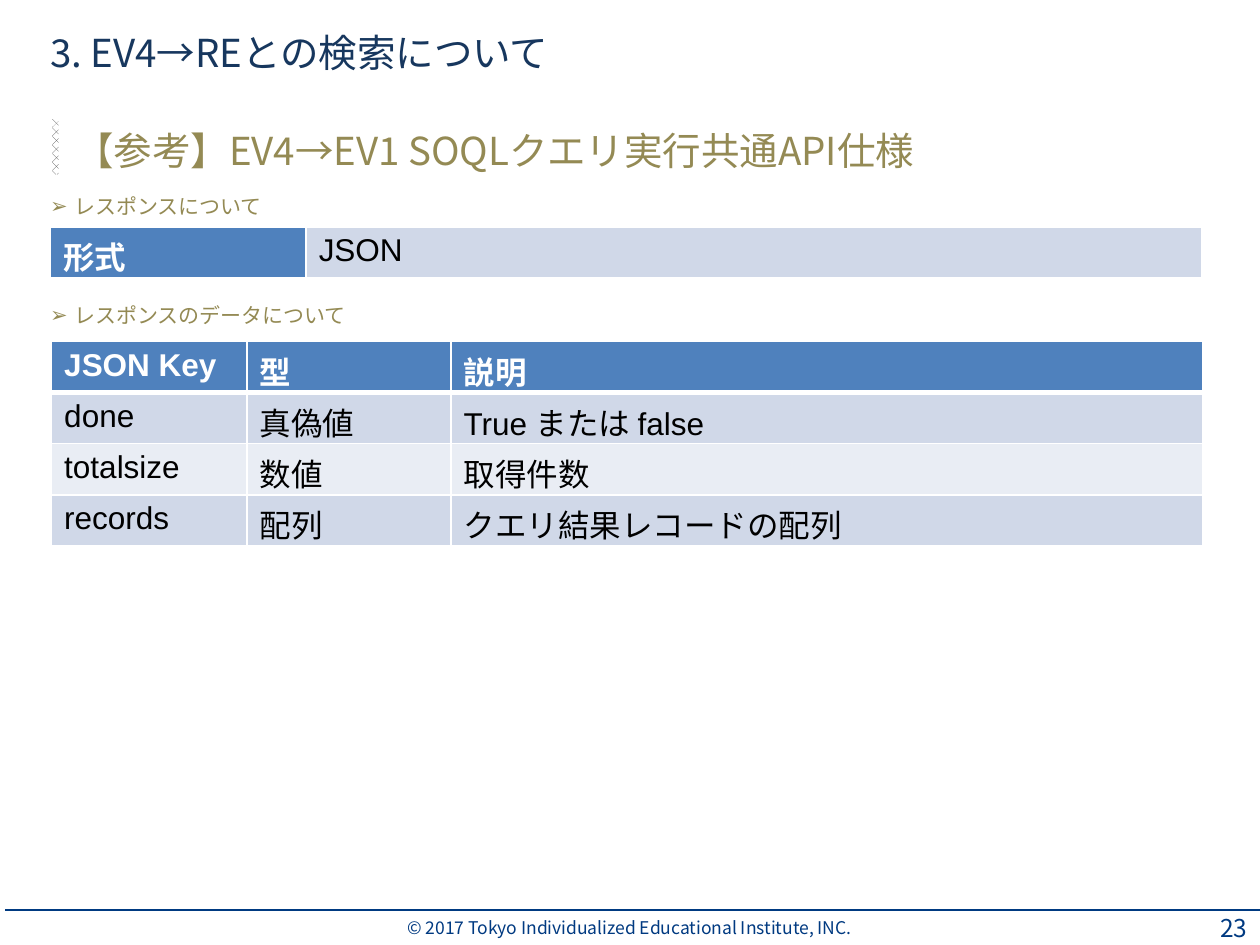
from lxml import etree
from pptx import Presentation
from pptx.dml.color import RGBColor
from pptx.enum.dml import MSO_PATTERN
from pptx.enum.shapes import MSO_CONNECTOR, MSO_SHAPE
from pptx.enum.text import MSO_ANCHOR, PP_ALIGN
from pptx.oxml.ns import qn
from pptx.util import Inches, Pt

LEFT, CENTER, RIGHT = PP_ALIGN.LEFT, PP_ALIGN.CENTER, PP_ALIGN.RIGHT
MIDDLE = MSO_ANCHOR.MIDDLE
RECT = MSO_SHAPE.RECTANGLE
STRAIGHT = MSO_CONNECTOR.STRAIGHT
PCT50 = MSO_PATTERN.PERCENT_50

NAVY = RGBColor(0x17, 0x37, 0x5E)
FOOTER = RGBColor(0x00, 0x3A, 0x81)
OLIVE = RGBColor(0x94, 0x8A, 0x54)
GRAY = RGBColor(0x4D, 0x4D, 0x4D)
WHITE = RGBColor(0xFF, 0xFF, 0xFF)
BLACK = RGBColor(0x00, 0x00, 0x00)
HEADER = RGBColor(0x4F, 0x81, 0xBD)
BAND_DARK = RGBColor(0xD0, 0xD8, 0xE8)
BAND_LIGHT = RGBColor(0xE9, 0xED, 0xF4)
CJK = "Noto Sans CJK JP"

prs = Presentation()
prs.slide_width, prs.slide_height = Inches(10), Inches(7.5)
COL = prs.slide_width / 100
ROW = prs.slide_height / 75
s = prs.slides.add_slide(prs.slide_layouts[6])


def box(x, y, w, h):
    return int(x * COL), int(y * ROW), int(w * COL), int(h * ROW)


def write(tf, text, size=18, color=BLACK, font=CJK, bold=False, align=LEFT, bullet=None):
    p = tf.paragraphs[0]
    p.alignment = align
    if bullet:
        pPr = p._p.get_or_add_pPr()
        pPr.set("marL", str(Inches(0.19)))
        pPr.set("indent", str(-Inches(0.19)))
        etree.SubElement(pPr, qn("a:buFont")).set("typeface", "Arial")
        etree.SubElement(pPr, qn("a:buChar")).set("char", bullet)
    r = p.add_run()
    r.text = text
    r.font.name, r.font.size, r.font.bold = font, Pt(size), bold
    r.font.color.rgb = color
    etree.SubElement(r._r.get_or_add_rPr(), qn("a:ea")).set("typeface", CJK)


texts = [
    ("© 2017 Tokyo Individualized Educational Institute, INC.", (17.6, 72.2, 64.7, 2.8),
     dict(size=10, color=FOOTER, align=CENTER)),
    ("23", (94.1, 72.2, 5.9, 2.8), dict(size=14, color=FOOTER, align=RIGHT)),
    ("3. EV4→REとの検索について", (3, 1.1, 78.1, 6), dict(size=22, color=NAVY)),
    ("【参考】EV4→EV1 SOQLクエリ実行共通API仕様", (5, 9, 90.4, 5.8), dict(size=22, color=OLIVE)),
    ("レスポンスについて", (3, 14.6, 90.4, 3.6), dict(size=12, color=OLIVE, bullet="➢")),
    ("レスポンスのデータについて", (3, 23.2, 90.4, 3.6), dict(size=12, color=OLIVE, bullet="➢")),
]
for text, area, fmt in texts:
    tf = s.shapes.add_textbox(*box(*area)).text_frame
    tf.word_wrap = True
    tf.vertical_anchor = MIDDLE
    if text.startswith("©"):
        tf.margin_top = tf.margin_bottom = 0
    write(tf, text, **fmt)

x, y, length, _ = box(0.4, 72.2, 99.7, 0)
rule = s.shapes.add_connector(STRAIGHT, x, y, x + length, y)
rule.line.color.rgb = FOOTER
rule.line.width = Pt(1)
etree.SubElement(rule._element.spPr, qn("a:effectLst"))

sp = s.shapes.add_shape(RECT, *box(2.2, 11.4, 4.4, 0.5))
sp.rotation = 270
sp.shadow.inherit = False
sp.fill.patterned()
sp.fill.pattern = PCT50
sp.fill.fore_color.rgb = GRAY
sp.fill.back_color.rgb = WHITE
sp.line.fill.background()

tables = [
    ((4, 18), [20.3, 71.1], [["形式", "JSON"]], False),
    ((4.1, 27.1), [15.5, 16.2, 59.7], [
        ["JSON Key", "型", "説明"],
        ["done", "真偽値", "True または false"],
        ["totalsize", "数値", "取得件数"],
        ["records", "配列", "クエリ結果レコードの配列"],
    ], True),
]
for (x, y), widths, rows, top_header in tables:
    area = box(x, y, sum(widths), 4.06 * len(rows))
    table = s.shapes.add_table(len(rows), len(widths), *area).table
    for column, width in zip(table.columns, widths):
        column.width = int(width * COL)
    for i, row in enumerate(rows):
        for j, text in enumerate(row):
            cell = table.cell(i, j)
            head = i == 0 if top_header else j == 0
            cell.fill.solid()
            cell.fill.fore_color.rgb = HEADER if head else BAND_LIGHT if i == 2 else BAND_DARK
            write(cell.text_frame, text, font="Arial", bold=head, color=WHITE if head else BLACK)
            tcPr = cell._tc.get_or_add_tcPr()
            for k, side in enumerate(("lnL", "lnR", "lnT", "lnB")):
                heavy = top_header and (i, side) in ((0, "lnB"), (1, "lnT"))
                ln = etree.Element(qn(f"a:{side}"), w=str(Pt(3 if heavy else 1)))
                fill = etree.SubElement(ln, qn("a:solidFill"))
                etree.SubElement(fill, qn("a:srgbClr")).set("val", str(WHITE))
                tcPr.insert(k, ln)

prs.save("out.pptx")
